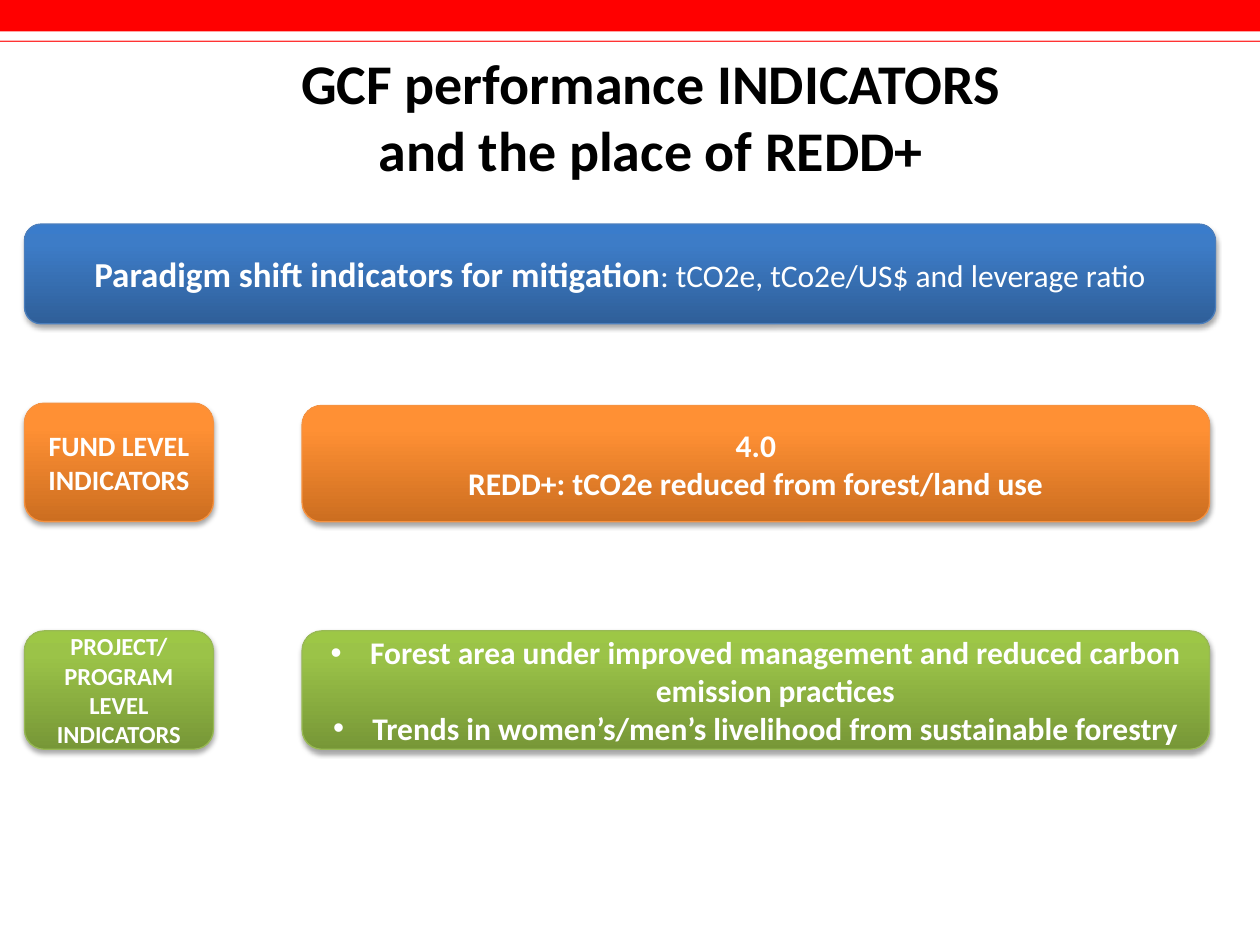
from copy import deepcopy

from lxml import etree
from pptx import Presentation
from pptx.dml.color import RGBColor
from pptx.enum.shapes import MSO_SHAPE
from pptx.enum.text import MSO_ANCHOR, MSO_AUTO_SIZE, PP_ALIGN
from pptx.oxml.ns import qn
from pptx.util import Pt

RECT, ROUNDED = MSO_SHAPE.RECTANGLE, MSO_SHAPE.ROUNDED_RECTANGLE
CENTER, MIDDLE, NO_FIT = PP_ALIGN.CENTER, MSO_ANCHOR.MIDDLE, MSO_AUTO_SIZE.NONE

THEME = {
    "font": "Calibri",
    "title": "000000",
    "text": "FFFFFF",
    "band": "FF0000",
    "rule": "FF3333",
    # gradient from bottom to top, then outline
    "blue": (("2F5F99", "3D7CC7", "3A7CCB"), "4B7EBC"),
    "orange": (("CC6E20", "FF9034", "FF9136"), "F69240"),
    "green": (("779737", "9BC348", "9DC746"), "98B955"),
    "sizes": {"title": 32, "lead": 20, "body": 18, "label": 16, "small": 14},
}
STOPS = (0, 0.8, 1)
BULLET_INDENT = Pt(22.5)


def add_text(paragraph, text, size="body", color="text", bold=True, bullet=False):
    """Append text to a centred paragraph; a newline becomes a line break."""
    paragraph.alignment = CENTER
    if bullet:
        props = paragraph._p.get_or_add_pPr()
        props.set("marL", str(BULLET_INDENT))
        props.set("indent", str(-BULLET_INDENT))
        etree.SubElement(props, qn("a:buFont"), typeface="Arial")
        etree.SubElement(props, qn("a:buChar"), char="•")
    for number, line in enumerate(text.split("\n")):
        if number:
            paragraph.add_line_break()
        run = paragraph.add_run()
        run.text = line
        run.font.name = THEME["font"]
        run.font.size = Pt(THEME["sizes"][size])
        run.font.bold = bold
        run.font.color.rgb = RGBColor.from_string(THEME[color])


def add_panel(box, color):
    """Add a rounded panel with a vertical gradient and a soft shadow."""
    panel = slide.shapes.add_shape(ROUNDED, *map(Pt, box))
    shades, outline = THEME[color]
    panel.fill.gradient()
    panel.fill.gradient_angle = 90
    stop_list = panel._element.spPr.find(".//" + qn("a:gsLst"))
    stop_list.append(deepcopy(stop_list[-1]))
    for stop, position, shade in zip(panel.fill.gradient_stops, STOPS, shades):
        stop.position = position
        stop.color.rgb = RGBColor.from_string(shade)
    panel.line.color.rgb = RGBColor.from_string(outline)
    panel.line.width = Pt(0.75)

    panel.shadow.inherit = False
    effects = panel._element.spPr.find(qn("a:effectLst"))
    shadow = etree.SubElement(effects, qn("a:outerShdw"), blurRad=str(Pt(3.1)),
                              dist=str(Pt(1.8)), dir="5400000", rotWithShape="0")
    black = etree.SubElement(shadow, qn("a:srgbClr"), val="000000")
    etree.SubElement(black, qn("a:alpha"), val="35000")

    panel.text_frame.word_wrap = True
    panel.text_frame.vertical_anchor = MIDDLE
    return panel.text_frame


deck = Presentation()
deck.slide_width, deck.slide_height = Pt(720), Pt(540)
slide = deck.slides.add_slide(deck.slide_layouts[5])

# Red band and thin rule along the top
for top, height, color in ((0, 18, "band"), (23.2, 0.75, "rule")):
    stripe = slide.shapes.add_shape(RECT, 0, Pt(top), Pt(720), Pt(height))
    stripe.shadow.inherit = False
    stripe.fill.solid()
    stripe.fill.fore_color.rgb = RGBColor.from_string(THEME[color])
    stripe.line.fill.background()

# Title
title = slide.shapes.title
title.left, title.top, title.width, title.height = map(Pt, (48, 21, 648, 90))
title.text_frame.auto_size = NO_FIT
title.text_frame.vertical_anchor = MIDDLE
add_text(title.text_frame.paragraphs[0],
         "GCF performance INDICATORS\nand the place of REDD+",
         size="title", color="title")

# Paradigm shift indicators
paradigm = add_panel((14, 128, 680.6, 57), "blue").paragraphs[0]
add_text(paradigm, "Paradigm shift indicators for mitigation", size="lead")
add_text(paradigm, ": tCO2e, tCo2e/US$ and leverage ratio", bold=False)

# Indicator levels: a label on the left, its indicators on the right
LEVELS = (
    ("orange", 230.4, 231.7, 66.5, "label", ["FUND LEVEL INDICATORS"], False,
     ["4.0", "REDD+: tCO2e reduced from forest/land use"]),
    ("green", 360.5, 360.5, 67.7, "small", ["PROJECT/", "PROGRAM LEVEL INDICATORS"], True,
     ["Forest area under improved management and reduced carbon emission practices",
      "Trends in women’s/men’s livelihood from sustainable forestry"]),
)
for color, label_top, top, height, label_size, label, bulleted, indicators in LEVELS:
    for box, lines, style in (
        ((14, label_top, 108, 67.7), label, {"size": label_size}),
        ((172.6, top, 518.6, height), indicators, {"bullet": bulleted}),
    ):
        frame = add_panel(box, color)
        for number, line in enumerate(lines):
            paragraph = frame.add_paragraph() if number else frame.paragraphs[0]
            add_text(paragraph, line, **style)

deck.save("out.pptx")
